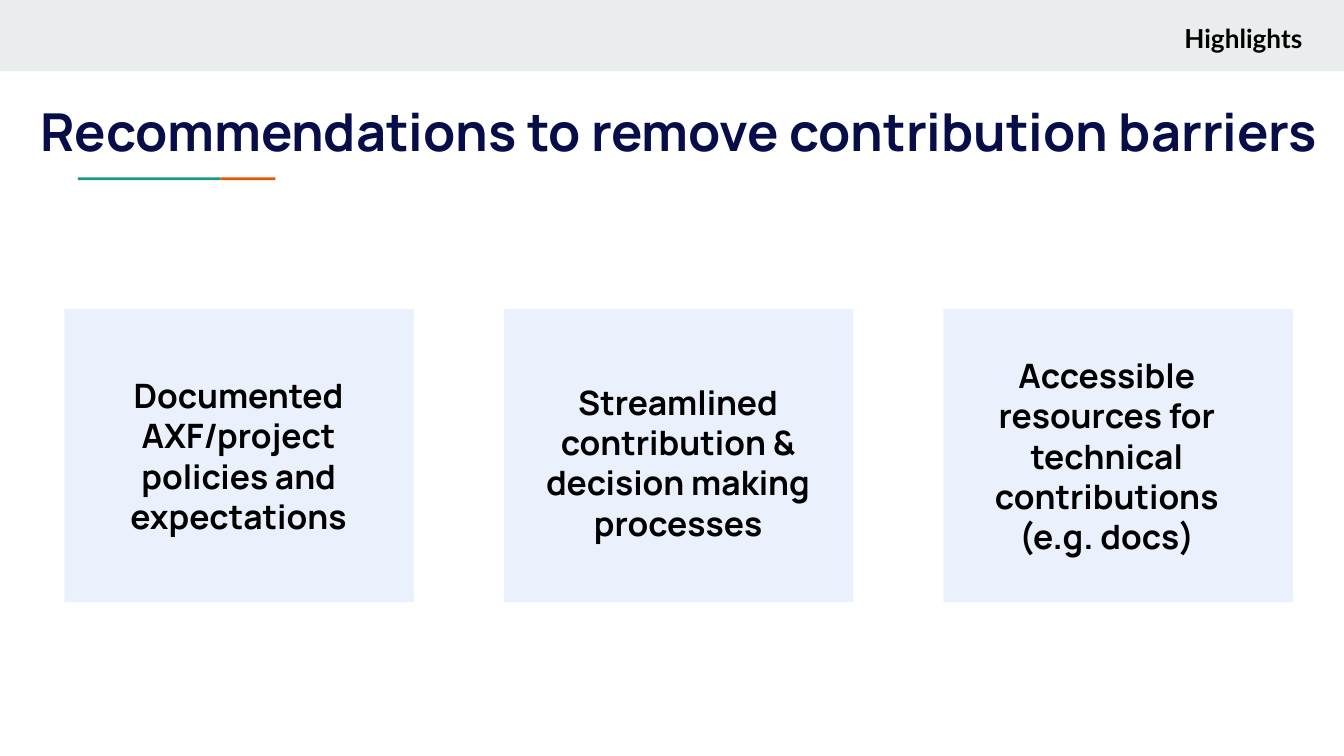
from dataclasses import dataclass

from lxml import etree
from pptx import Presentation
from pptx.dml.color import RGBColor
from pptx.enum.shapes import MSO_SHAPE
from pptx.enum.text import MSO_ANCHOR, MSO_AUTO_SIZE, PP_ALIGN
from pptx.oxml.ns import qn
from pptx.shapes.autoshape import Shape
from pptx.slide import Slide
from pptx.util import Inches, Pt

RECT = MSO_SHAPE.RECTANGLE
TOP, MIDDLE = MSO_ANCHOR.TOP, MSO_ANCHOR.MIDDLE
LEFT, CENTER, RIGHT = PP_ALIGN.LEFT, PP_ALIGN.CENTER, PP_ALIGN.RIGHT
FIXED = MSO_AUTO_SIZE.NONE


@dataclass(frozen=True)
class Theme:
    band: str = "E9EDEE"
    teal: str = "1A9988"
    orange: str = "EB5600"
    card: str = "C9DAF8"
    navy: str = "060D49"
    black: str = "000000"
    body: str = "Manrope"
    label: str = "Lato"
    title_size: int = 28
    card_size: int = 18
    label_size: int = 14


@dataclass(frozen=True)
class Box:
    left: float
    top: float
    width: float
    height: float


@dataclass(frozen=True)
class Style:
    font: str
    size: int
    color: str
    align: PP_ALIGN
    anchor: MSO_ANCHOR


@dataclass(frozen=True)
class Card:
    text: str
    inset: float = 0.17
    drop: float = 0


THEME = Theme()
TITLE = Style(THEME.body, THEME.title_size, THEME.navy, LEFT, TOP)
LABEL = Style(THEME.label, THEME.label_size, THEME.black, RIGHT, TOP)
BODY = Style(THEME.body, THEME.card_size, THEME.black, CENTER, MIDDLE)

CARDS = [
    Card("Documented AXF/project policies and expectations"),
    Card("Streamlined contribution & decision making processes", drop=0.05),
    Card("Accessible resources for technical contributions (e.g. docs)", inset=0.09),
]
WIDTH = 10
HEIGHT = WIDTH * 9 / 16
FIRST = Box(0.48, 2.3, 2.6, 2.18)
STEP = 3.27
TEXT_WIDTH = 2.25


def place(shape: Shape, box: Box) -> None:
    shape.left, shape.top = Inches(box.left), Inches(box.top)
    shape.width, shape.height = Inches(box.width), Inches(box.height)


def add_rect(slide: Slide, box: Box, color: str, alpha: int = 100) -> None:
    shape = slide.shapes.add_shape(RECT, 0, 0, 0, 0)
    place(shape, box)
    shape.shadow.inherit = False
    shape.line.fill.background()
    shape.fill.solid()
    shape.fill.fore_color.rgb = RGBColor.from_string(color)
    if alpha < 100:
        tint = shape.fill._xPr.find(f".//{qn('a:srgbClr')}")
        etree.SubElement(tint, qn("a:alpha"), val=str(alpha * 1000))


def write(shape: Shape, box: Box, text: str, style: Style) -> None:
    place(shape, box)
    frame = shape.text_frame
    frame.word_wrap = True
    frame.auto_size = FIXED
    frame.vertical_anchor = style.anchor
    frame.margin_left = frame.margin_right = Inches(0.1)
    frame.margin_top = frame.margin_bottom = Inches(0.1)
    para = frame.paragraphs[0]
    para.alignment = style.align
    run = para.add_run()
    run.text = text
    run.font.name = style.font
    run.font.size = Pt(style.size)
    run.font.bold = True
    run.font.color.rgb = RGBColor.from_string(style.color)


def add_text(slide: Slide, box: Box, text: str, style: Style) -> None:
    write(slide.shapes.add_textbox(0, 0, 0, 0), box, text, style)


def main() -> None:
    deck = Presentation()
    deck.slide_width, deck.slide_height = Inches(WIDTH), Inches(HEIGHT)
    slide = deck.slides.add_slide(deck.slide_layouts[5])

    # Header band and its label
    add_rect(slide, Box(0, 0, WIDTH, 0.53), THEME.band)
    add_text(slide, Box(5.28, 0.07, 4.51, 0.39), "Highlights", LABEL)

    # Title with a two-colour rule below
    write(slide.shapes.title, Box(0.2, 0.64, 9.8, 1.11),
          "Recommendations to remove contribution barriers", TITLE)
    add_rect(slide, Box(1.64, 1.32, 0.41, 0.02), THEME.orange)
    add_rect(slide, Box(0.58, 1.32, 1.06, 0.02), THEME.teal)

    # Row of cards
    for i, card in enumerate(CARDS):
        left = FIRST.left + i * STEP
        add_rect(slide, Box(left, FIRST.top, FIRST.width, FIRST.height),
                 THEME.card, alpha=37)
        add_text(slide, Box(left + card.inset, FIRST.top + card.drop,
                            TEXT_WIDTH, FIRST.height), card.text, BODY)

    deck.save("out.pptx")


if __name__ == "__main__":
    main()
